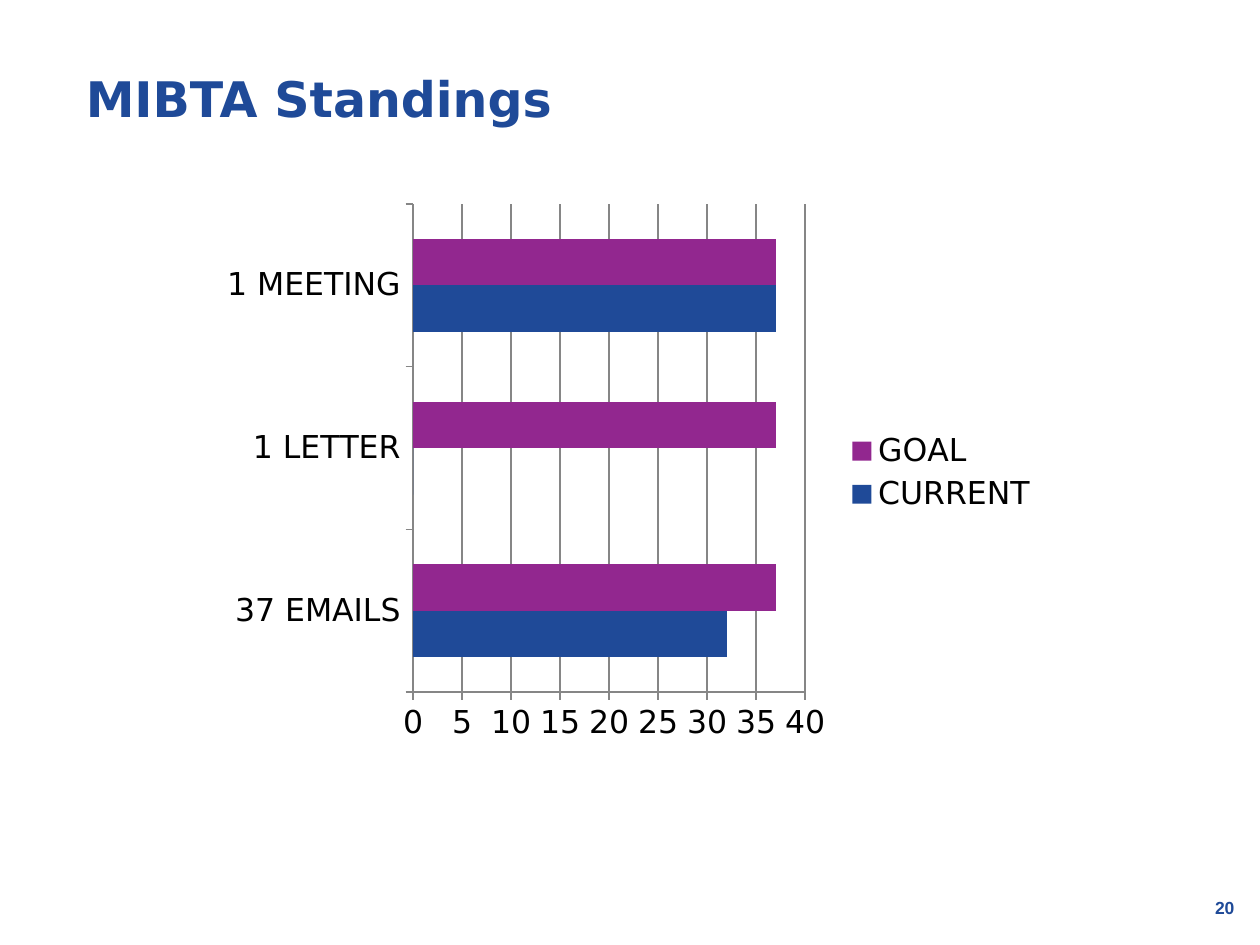
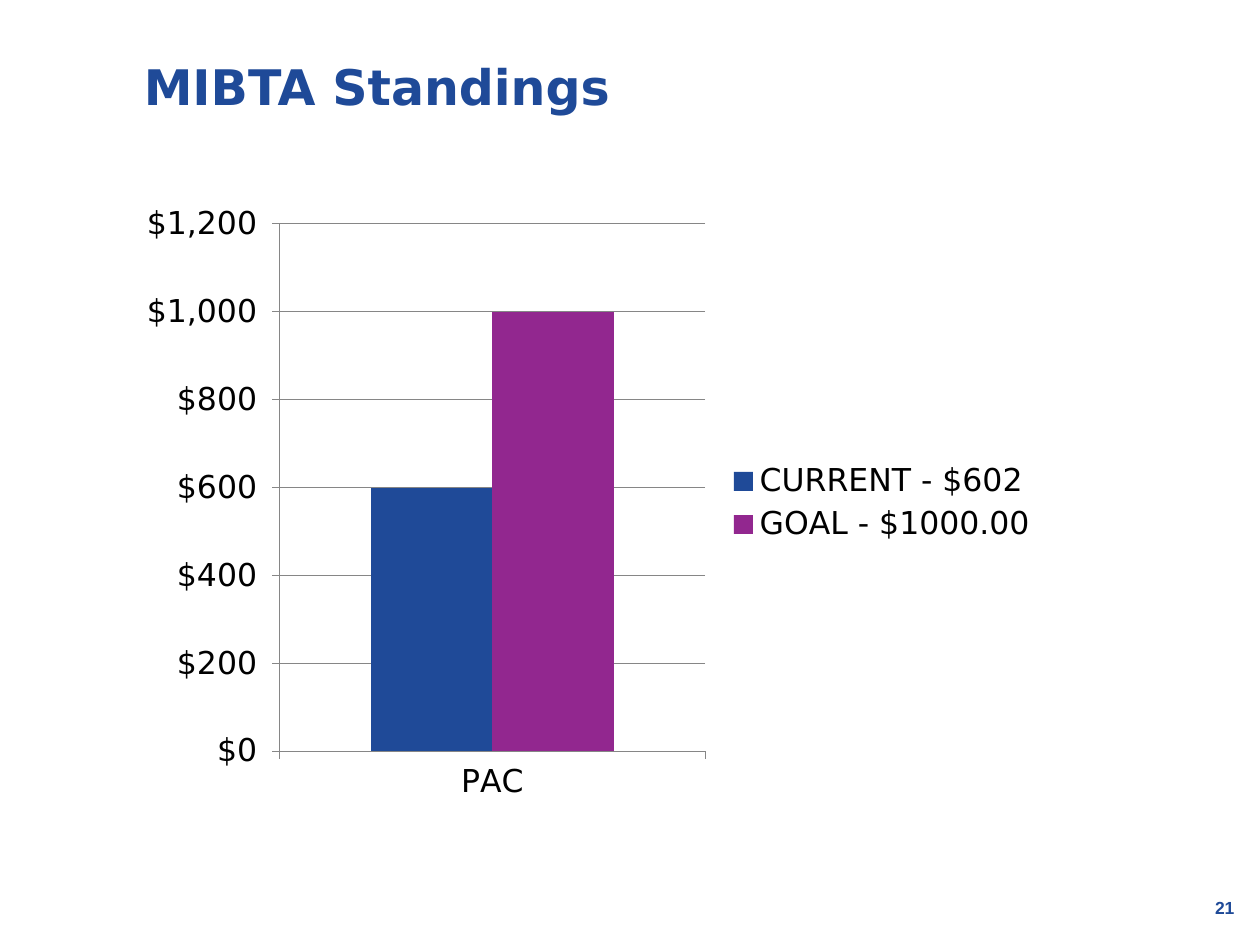
from pptx import Presentation
from pptx import util as u
from pptx.chart.data import CategoryChartData
from pptx.dml.color import RGBColor
from pptx.enum import chart as c
from pptx.enum import text as t

BLUE = RGBColor(0x1F, 0x4A, 0x98)
PURPLE = RGBColor(0x92, 0x27, 0x8F)
GREY = RGBColor(0x86, 0x86, 0x86)
BLACK = RGBColor(0, 0, 0)

TITLE_FONT = {"name": "DejaVu Sans", "size": u.Pt(28), "bold": True}
NUMBER_FONT = {"name": "Arial", "size": u.Pt(10), "bold": True}
CHART_FONT = {"name": "DejaVu Sans", "size": u.Pt(18), "bold": False}
DOLLARS = '"$"#,##0_);[Red]\\("$"#,##0\\)'


def set_all(target, values):
    for name, value in values.items():
        setattr(target, name, value)


class Deck:
    """Holds the shared style and the slide being built."""

    def __init__(self):
        self.presentation = Presentation()
        set_all(self.presentation, {"slide_width": u.Cm(25.4), "slide_height": u.Cm(19.05)})
        self.slide = None

    def add_slide(self, number):
        self.slide = self.presentation.slides.add_slide(self.presentation.slide_layouts[6])
        paragraph = self.add_text(str(number), (24.03, 18.08, 1.32, 0.48), NUMBER_FONT,
                                  [0.05] * 4, t.MSO_ANCHOR.BOTTOM)
        set_all(paragraph, {"alignment": t.PP_ALIGN.CENTER, "line_spacing": 0.9})

    def add_text(self, words, box, font, margins, anchor):
        """Add a one-line text box; margins run left, top, right, bottom."""
        frame = self.slide.shapes.add_textbox(*map(u.Cm, box)).text_frame
        sides = ("margin_left", "margin_top", "margin_right", "margin_bottom")
        set_all(frame, dict(zip(sides, map(u.Cm, margins))))
        set_all(frame, {"word_wrap": True, "vertical_anchor": anchor})
        paragraph = frame.paragraphs[0]
        paragraph.text = words
        set_all(paragraph.font, font)
        paragraph.font.color.rgb = BLUE
        return paragraph

    def add_title(self, words, top, indent):
        self.add_text(words, (0.36, top, 24.74, 1.19), TITLE_FONT,
                      (indent, 0, 0, 0), t.MSO_ANCHOR.MIDDLE)

    def add_chart(self, kind, box, categories, series, axis_range, number_format="General"):
        """Add a clustered chart; axis_range is (maximum, major unit)."""
        data = CategoryChartData()
        data.categories = categories
        for name, values in series.items():
            data.add_series(name, values)
        chart = self.slide.shapes.add_chart(kind, *map(u.Cm, box), data).chart
        set_all(chart, {"has_title": False, "has_legend": True})
        set_all(chart.font, CHART_FONT)
        chart.font.color.rgb = BLACK
        set_all(chart.legend, {"position": c.XL_LEGEND_POSITION.RIGHT,
                               "include_in_layout": False})

        plot = chart.plots[0]
        set_all(plot, {"gap_width": 150, "overlap": 0, "vary_by_categories": False})
        for bars, color in zip(plot.series, (BLUE, PURPLE)):
            bars.format.fill.solid()
            bars.format.fill.fore_color.rgb = color

        value_axis = chart.value_axis
        maximum, unit = axis_range
        set_all(value_axis, {"minimum_scale": 0, "maximum_scale": maximum,
                             "major_unit": unit, "has_major_gridlines": True})
        set_all(value_axis.tick_labels, {"number_format": number_format,
                                         "number_format_is_linked": False})
        for axis in (chart.category_axis, value_axis):
            axis.major_tick_mark = c.XL_TICK_MARK.OUTSIDE
        for part in (chart.category_axis, value_axis, value_axis.major_gridlines):
            part.format.line.color.rgb = GREY
            part.format.line.width = u.Pt(0.75)


def main():
    deck = Deck()

    deck.add_slide(20)
    deck.add_chart(c.XL_CHART_TYPE.BAR_CLUSTERED, (4.24, 3.89, 16.94, 11.28),
                   ["37 EMAILS", "1 LETTER", "1 MEETING"],
                   {"CURRENT": (32, 0, 37), "GOAL": (37, 37, 37)}, (40, 5))
    deck.add_title("MIBTA Standings", top=1.37, indent=1.37)

    deck.add_slide(21)
    deck.add_chart(c.XL_CHART_TYPE.COLUMN_CLUSTERED, (2.59, 3.89, 18.59, 12.5),
                   ["PAC"], {"CURRENT - $602": (600,), "GOAL - $1000.00": (1000,)},
                   (1200, 200), DOLLARS)
    deck.add_title("MIBTA Standings", top=1.14, indent=2.54)

    deck.presentation.save("out.pptx")


if __name__ == "__main__":
    main()
